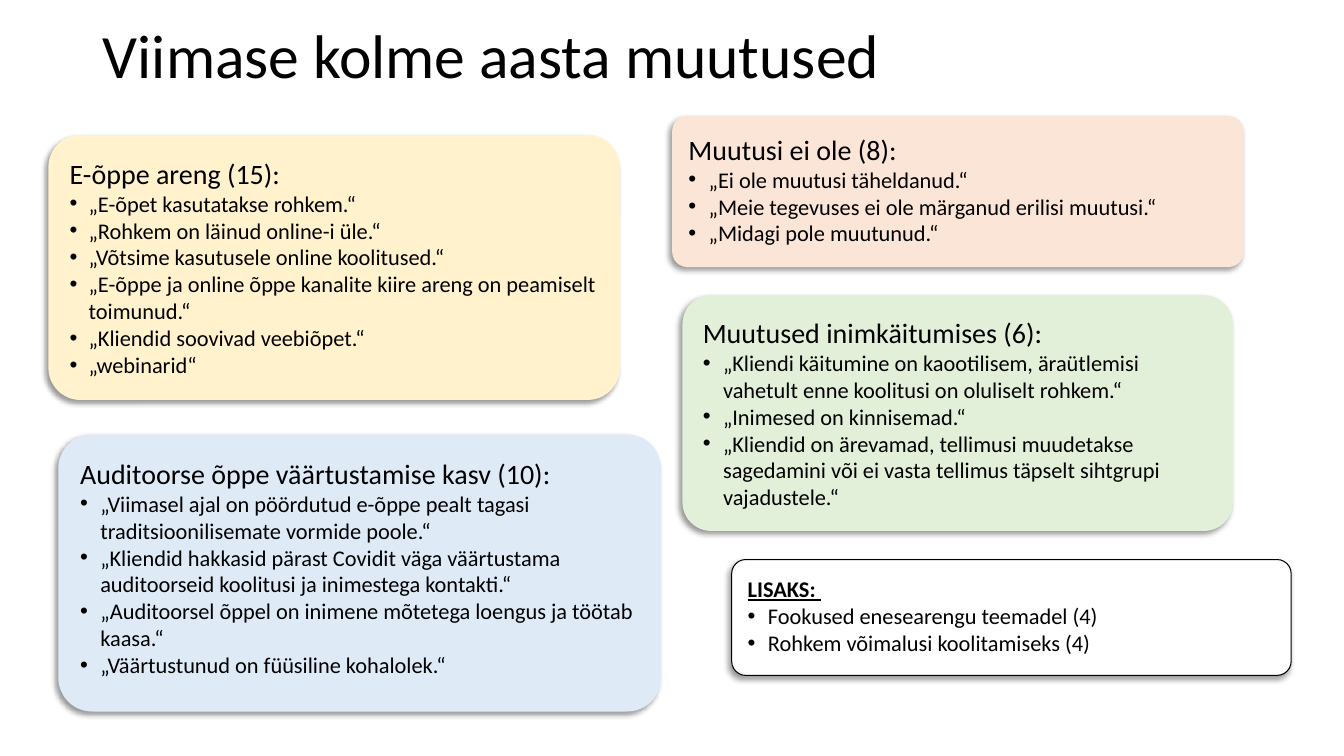
from lxml.etree import SubElement
from pptx import Presentation
from pptx.dml.color import RGBColor
from pptx.enum.shapes import MSO_SHAPE
from pptx.enum.text import MSO_ANCHOR, MSO_AUTO_SIZE, PP_ALIGN
from pptx.oxml.ns import qn
from pptx.util import Cm, Pt


def paint(target, color):
    """Give a font, or a solid fill, the hex colour."""
    if hasattr(target, "solid"):
        target.solid()
        target.fore_color.rgb = RGBColor.from_string(color)
    else:
        target.color.rgb = RGBColor.from_string(color)


def drop_shadow(shape):
    shape.shadow.inherit = False
    effects = shape._element.spPr.find(qn("a:effectLst"))
    outer = SubElement(effects, qn("a:outerShdw"), blurRad=str(Pt(4)),
                       dist=str(Pt(3)), dir=str(135 * 60000),
                       algn="tr", rotWithShape="0")
    black = SubElement(outer, qn("a:srgbClr"), val="000000")
    SubElement(black, qn("a:alpha"), val="40000")


# Position and size in cm, corner, fill, bullet indent, heading, bullets
CARDS = [
    ((1.22, 3.4, 14.4, 6.68), 0.121, "FFF2CC", 0.48, "E-õppe areng (15):", [
        "„E-õpet kasutatakse rohkem.“",
        "„Rohkem on läinud online-i üle.“",
        "„Võtsime kasutusele online koolitused.“",
        "„E-õppe ja online õppe kanalite kiire areng on peamiselt toimunud.“",
        "„Kliendid soovivad veebiõpet.“",
        "„webinarid“"]),
    ((1.47, 10.95, 15.19, 6.98), 0.122, "DEEBF7", 0.51,
     "Auditoorse õppe väärtustamise kasv (10):", [
        "„Viimasel ajal on pöördutud e-õppe pealt tagasi "
        "traditsioonilisemate vormide poole.“",
        "„Kliendid hakkasid pärast Covidit väga väärtustama "
        "auditoorseid koolitusi ja inimestega kontakti.“",
        "„Auditoorsel õppel on inimene mõtetega loengus ja töötab kaasa.“",
        "„Väärtustunud on füüsiline kohalolek.“"]),
    ((17.2, 7.44, 13.87, 5.94), 0.122, "E2F0D9", 0.51,
     "Muutused inimkäitumises (6):", [
        "„Kliendi käitumine on kaootilisem, äraütlemisi "
        "vahetult enne koolitusi on oluliselt rohkem.“",
        "„Inimesed on kinnisemad.“",
        "„Kliendid on ärevamad, tellimusi muudetakse sagedamini "
        "või ei vasta tellimus täpselt sihtgrupi vajadustele.“"]),
    ((18.44, 14.1, 14.1, 2.92), 0.122, "FFFFFF", 0.51, "LISAKS: ", [
        "Fookused enesearengu teemadel (4)",
        "Rohkem võimalusi koolitamiseks (4)"]),
    ((16.94, 2.92, 14.4, 3.81), 0.1, "FBE5D6", 0.51, "Muutusi ei ole (8):", [
        "„Ei ole muutusi täheldanud.“",
        "„Meie tegevuses ei ole märganud erilisi muutusi.“",
        "„Midagi pole muutunud.“"]),
]

deck = Presentation()
deck.slide_width, deck.slide_height = Cm(33.87), Cm(19.05)
slide = deck.slides.add_slide(deck.slide_layouts[5])

title = slide.shapes.title
title.left, title.top, title.width, title.height = (
    Cm(2.34), Cm(0.15), Cm(29.21), Cm(2.67))
title.text_frame.text = "Viimase kolme aasta muutused"
title.text_frame.vertical_anchor = MSO_ANCHOR.MIDDLE
head = title.text_frame.paragraphs[0]
head.alignment = PP_ALIGN.LEFT
head.line_spacing = 0.9
head.font.name, head.font.size = "Calibri", Pt(44)
paint(head.font, "000000")

for place, corner, color, indent, heading, quotes in CARDS:
    card = slide.shapes.add_shape(MSO_SHAPE.ROUNDED_RECTANGLE,
                                  *[Cm(n) for n in place])
    card.adjustments[0] = corner
    paint(card.fill, color)
    extra = heading.startswith("LISAKS")
    if extra:
        paint(card.line.fill, "000000")
        card.line.width = Pt(0.75)
    else:
        card.line.fill.background()
    drop_shadow(card)

    frame = card.text_frame
    frame.word_wrap = True
    frame.auto_size = MSO_AUTO_SIZE.SHAPE_TO_FIT_TEXT
    frame.vertical_anchor = MSO_ANCHOR.TOP
    frame.margin_left = frame.margin_right = Cm(0.3)
    frame.margin_top = frame.margin_bottom = Cm(0.3)
    frame.text = "\n".join([heading] + quotes)
    for row, para in enumerate(frame.paragraphs):
        para.alignment = PP_ALIGN.LEFT
        para.font.name = "Calibri"
        para.font.size = Pt(16 if row or extra else 20)
        paint(para.font, "000000")
        if row:
            props = para._p.get_or_add_pPr()
            props.set("marL", str(Cm(indent)))
            props.set("indent", str(-Cm(indent)))
            bullet_font = SubElement(props, qn("a:buFont"), typeface="Arial")
            bullet_font.addnext(props.makeelement(qn("a:buChar"), char="•"))
            # The schema wants bullets ahead of the default run properties
            props.append(props.find(qn("a:defRPr")))
        elif extra:
            para.font.bold = para.font.underline = True

deck.save("out.pptx")
